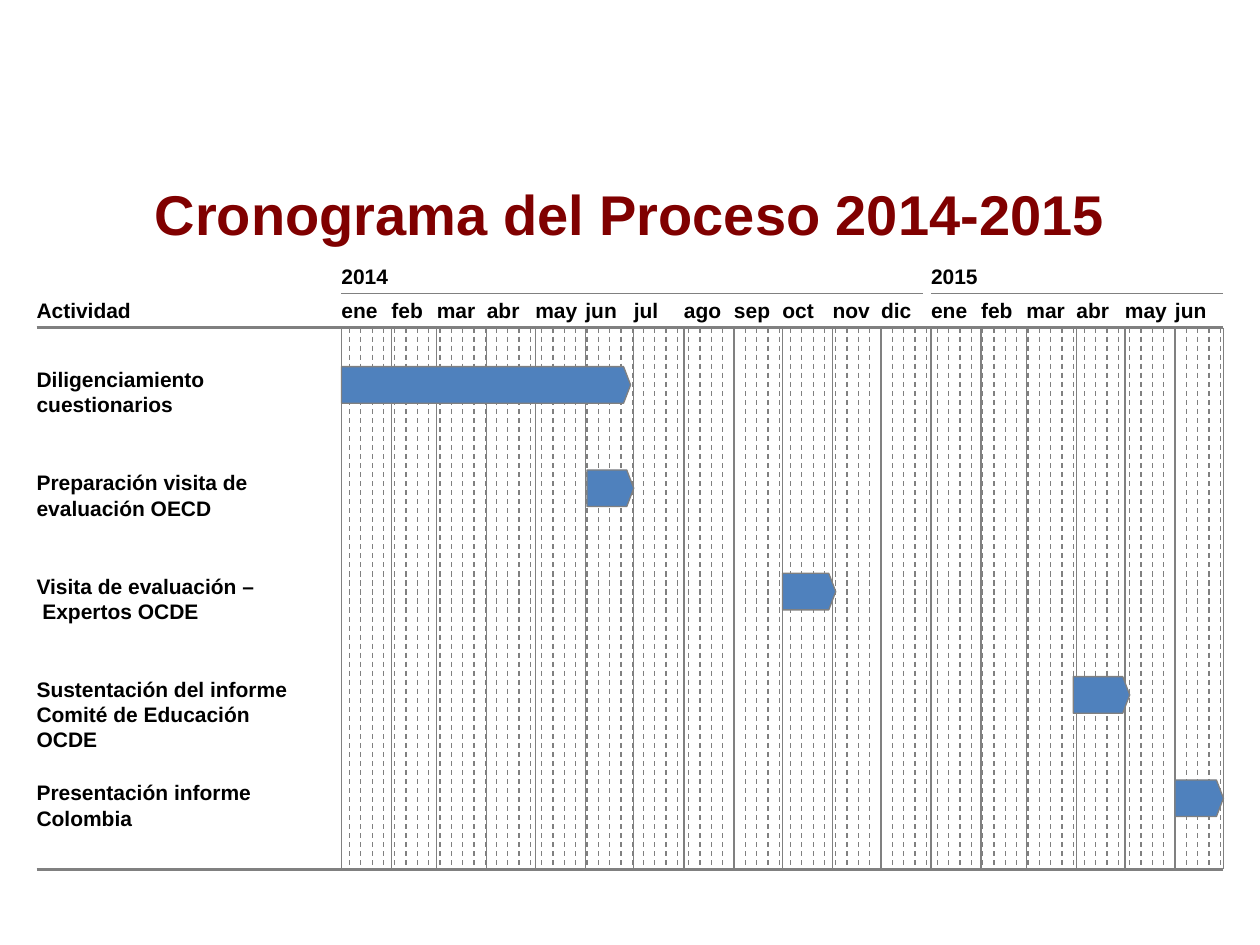
from itertools import accumulate

from lxml import etree
from pptx import Presentation
from pptx.dml.color import RGBColor
from pptx.enum.dml import MSO_LINE
from pptx.enum.shapes import MSO_CONNECTOR, MSO_SHAPE
from pptx.enum.text import MSO_ANCHOR, PP_ALIGN
from pptx.oxml.ns import qn
from pptx.util import Inches, Pt

STRAIGHT = MSO_CONNECTOR.STRAIGHT
PENTAGON = MSO_SHAPE.PENTAGON
DASH = MSO_LINE.DASH
TOP, MIDDLE, BOTTOM = MSO_ANCHOR.TOP, MSO_ANCHOR.MIDDLE, MSO_ANCHOR.BOTTOM

COLORS = {"title": "800000", "text": "000000", "rule": "808080", "bar": "4F81BD"}
FONT = "Arial"

TITLE = "Cronograma del Proceso 2014-2015"
HEADING = "Actividad"
MONTHS = [
    ("ene", 31), ("feb", 28), ("mar", 31), ("abr", 30), ("may", 31), ("jun", 30),
    ("jul", 31), ("ago", 31), ("sep", 30), ("oct", 31), ("nov", 30), ("dic", 31),
]
CALENDAR = MONTHS + MONTHS[:6]
YEARS = [("2014", 0, 12), ("2015", 12, 18)]  # label, first month, end month
FIRST_MONDAY = 5  # days after 1 January 2014
# label lines, label width, first and last day of the bar
ACTIVITIES = [
    (["Diligenciamiento", "cuestionarios"], 1.38, 0, 179),
    (["Preparación visita de", "evaluación OECD"], 1.72, 152, 181),
    (["Visita de evaluación –", " Expertos OCDE"], 1.73, 273, 306),
    (["Sustentación del informe", "Comité de Educación OCDE"], 2.22, 453, 488),
    (["Presentación informe", "Colombia"], 1.75, 516, 546),
]

LEFT, GRID_LEFT, RIGHT = 0.29, 2.71, 9.71
YEAR_TOP, MONTH_TOP, GRID_TOP, GRID_BOTTOM = 2.06, 2.33, 2.6, 6.9
HEADER_HEIGHT = 0.27
FIRST_ROW, ROW_STEP = 2.91, 0.82
BAR_HEIGHT, LABEL_HEIGHT = 0.29, 0.4
YEAR_GAP = 0.06

month_starts = [0, *accumulate(days for _, days in CALENDAR)]
total_days = month_starts[-1]


def day_x(day):
    """Horizontal position of a day counted from 1 January 2014."""
    return GRID_LEFT + (RIGHT - GRID_LEFT) * day / total_days


def color(name):
    return RGBColor.from_string(COLORS[name])


def add_span(para, text, size, color_name):
    span = para.add_run()
    span.text = text
    span.font.name = FONT
    span.font.size = Pt(size)
    span.font.bold = True
    span.font.color.rgb = color(color_name)


def add_text(page, lines, left, top, width, height, anchor, padding=0):
    box = page.shapes.add_textbox(Inches(left), Inches(top), Inches(width), Inches(height))
    frame = box.text_frame
    frame.word_wrap = False
    frame.vertical_anchor = anchor
    frame.margin_left = frame.margin_right = 0
    frame.margin_top = frame.margin_bottom = Inches(padding)
    for index, line in enumerate(lines):
        para = frame.add_paragraph() if index else frame.paragraphs[0]
        add_span(para, line, 12, "text")


def add_rule(page, x1, y1, x2, y2, width=0.75, dash=None):
    rule = page.shapes.add_connector(STRAIGHT, Inches(x1), Inches(y1), Inches(x2), Inches(y2))
    rule.line.color.rgb = color("rule")
    rule.line.width = Pt(width)
    if dash:
        rule.line.dash_style = dash
    etree.SubElement(rule.element.spPr, qn("a:effectLst"))


def add_bar(page, start, end, top):
    left = day_x(start)
    bar = page.shapes.add_shape(
        PENTAGON, Inches(left), Inches(top), Inches(day_x(end) - left), Inches(BAR_HEIGHT))
    bar.adjustments[0] = 0.19
    bar.shadow.inherit = False
    bar.fill.solid()
    bar.fill.fore_color.rgb = color("bar")
    bar.line.color.rgb = color("rule")
    bar.line.width = Pt(0.75)


def add_title(page):
    title = page.shapes.title
    title.left, title.top = Inches(0.5), Inches(1.07)
    title.width, title.height = Inches(9), Inches(1.25)
    title.text_frame.vertical_anchor = MIDDLE
    para = title.text_frame.paragraphs[0]
    para.alignment = PP_ALIGN.CENTER
    add_span(para, TITLE, 32, "title")


def add_calendar(page):
    for label, first, end in YEARS:
        left, right = day_x(month_starts[first]), day_x(month_starts[end])
        add_text(page, [label], left, YEAR_TOP, right - left, HEADER_HEIGHT, MIDDLE, 0.03)
        rule_end = right if end == len(CALENDAR) else right - YEAR_GAP
        add_rule(page, left, MONTH_TOP, rule_end, MONTH_TOP)
    for (label, days), start in zip(CALENDAR, month_starts):
        left = day_x(start)
        add_text(page, [label], left, MONTH_TOP, day_x(start + days) - left,
                 HEADER_HEIGHT, MIDDLE, 0.03)
    for monday in range(FIRST_MONDAY, total_days, 7):
        if monday not in month_starts:
            add_rule(page, day_x(monday), GRID_TOP, day_x(monday), GRID_BOTTOM, dash=DASH)
    for start in month_starts:
        add_rule(page, day_x(start), GRID_TOP, day_x(start), GRID_BOTTOM)
    for y in (GRID_TOP, GRID_BOTTOM):
        add_rule(page, LEFT, y, RIGHT, y, width=1.5)


def add_activities(page):
    add_text(page, [HEADING], LEFT, 2.36, 0.75, 0.2, BOTTOM)
    for row, (lines, width, start, end) in enumerate(ACTIVITIES):
        top = FIRST_ROW + row * ROW_STEP
        add_bar(page, start, end, top)
        add_text(page, lines, LEFT, top, width, LABEL_HEIGHT, TOP)


def main():
    deck = Presentation()
    deck.slide_width, deck.slide_height = Inches(10), Inches(7.5)
    page = deck.slides.add_slide(deck.slide_layouts[5])
    add_title(page)
    add_calendar(page)
    add_activities(page)
    deck.save("out.pptx")


if __name__ == "__main__":
    main()
